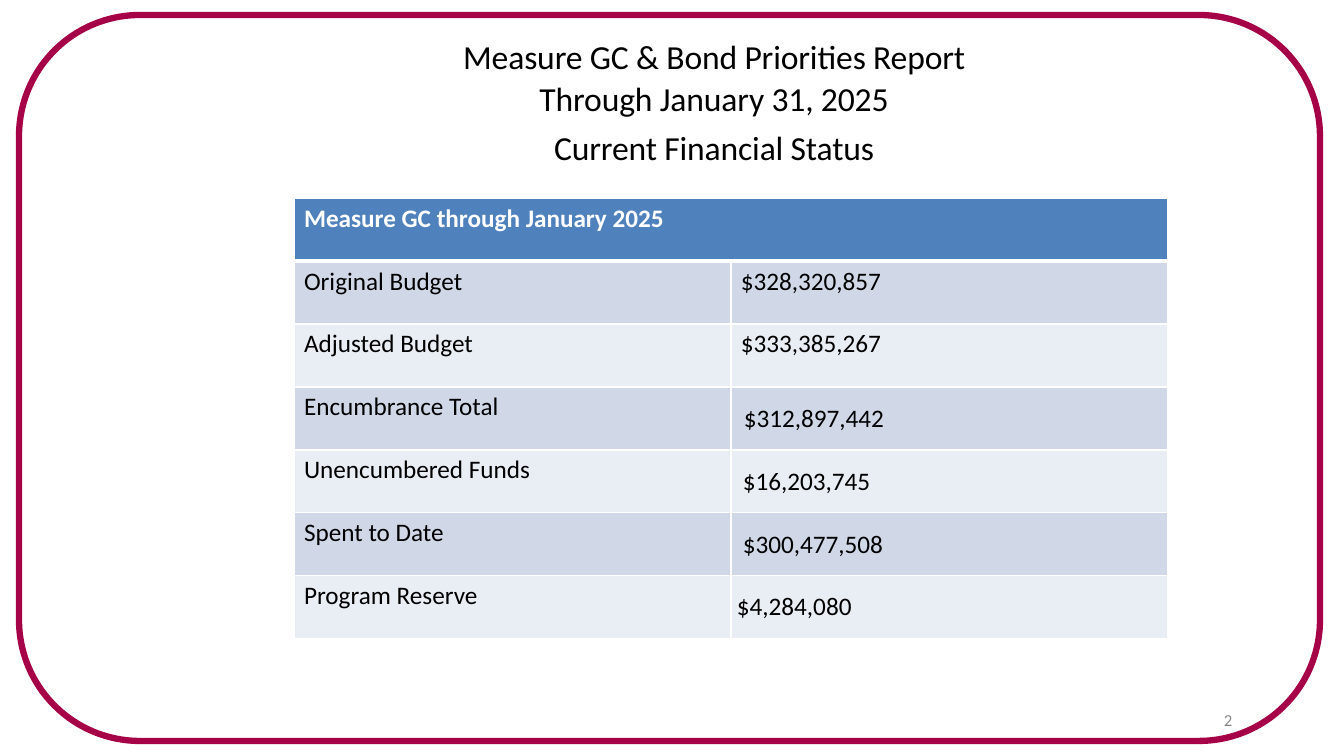
from dataclasses import dataclass

from lxml import etree
from pptx import Presentation
from pptx import util as u
from pptx.dml.color import RGBColor
from pptx.enum import shapes, text
from pptx.oxml import ns

EMU_PER_PX = 914400 / 100.8
FONT = "Calibri"
COLOURS = {
    "frame": "A60247",
    "page_number": "888888",
    "ink": "000000",
    "white": "FFFFFF",
    "header": "4F81BD",
    "odd_row": "D0D8E8",
    "even_row": "E9EDF4",
}


@dataclass
class BudgetRow:
    label: str
    value: str
    indent: int = 10
    centred: bool = True


BUDGET_ROWS = [
    BudgetRow("Original Budget", "$328,320,857", centred=False),
    BudgetRow("Adjusted Budget", "$333,385,267", centred=False),
    BudgetRow("Encumbrance Total", "$312,897,442", indent=13),
    BudgetRow("Unencumbered Funds", "$16,203,745", indent=12),
    BudgetRow("Spent to Date", "$300,477,508", indent=12),
    BudgetRow("Program Reserve", "$4,284,080", indent=6),
]


def px(length: int) -> u.Emu:
    return u.Emu(round(length * EMU_PER_PX))


def colour(name: str) -> RGBColor:
    return RGBColor.from_string(COLOURS[name])


def write(para, content: str, *, size: int, ink: str = "ink", bold: bool = False,
          align=text.PP_ALIGN.LEFT, line: float | None = None,
          before: float = 0, tracking: int = 0) -> None:
    span = para.add_run()
    span.text = content
    span.font.name = FONT
    span.font.size = u.Pt(size)
    span.font.bold = bold
    span.font.color.rgb = colour(ink)
    if tracking:
        span.font._element.set("spc", str(tracking))
    para.alignment = align
    if line:
        para.line_spacing = u.Pt(line)
    if before:
        para.space_before = u.Pt(before)


def add_text_frame(page, left: int, top: int, width: int, height: int):
    box = page.shapes.add_textbox(px(left), px(top), px(width), px(height))
    frame = box.text_frame
    frame.word_wrap = True
    frame.margin_left = frame.margin_top = frame.margin_right = frame.margin_bottom = 0
    return frame


def add_borders(cell, *, top: int = 1, bottom: int = 1) -> None:
    properties = cell._tc.get_or_add_tcPr()
    widths = {"a:lnL": 1, "a:lnR": 1, "a:lnT": top, "a:lnB": bottom}
    for position, (tag, width) in enumerate(widths.items()):
        border = etree.Element(ns.qn(tag), w=str(u.Pt(width)))
        fill = etree.SubElement(border, ns.qn("a:solidFill"))
        etree.SubElement(fill, ns.qn("a:srgbClr"), val=COLOURS["white"])
        properties.insert(position, border)


def fill_cell(cell, content: str, fill: str, *, ink: str = "ink", bold: bool = False,
              top: int = 1, bottom: int = 1) -> None:
    cell.fill.solid()
    cell.fill.fore_color.rgb = colour(fill)
    add_borders(cell, top=top, bottom=bottom)
    if content:
        write(cell.text_frame.paragraphs[0], content, size=18, ink=ink, bold=bold)


def add_frame(page) -> None:
    frame = page.shapes.add_shape(shapes.MSO_SHAPE.ROUNDED_RECTANGLE,
                                  px(19), px(15), px(1301), px(726))
    frame.shadow.inherit = False
    frame.fill.background()
    frame.line.color.rgb = colour("frame")
    frame.line.width = u.Pt(4.5)


def add_title(page) -> None:
    frame = add_text_frame(page, 436, 33, 556, 134)
    frame.margin_top = px(1)
    centre = text.PP_ALIGN.CENTER
    write(frame.paragraphs[0], "Measure GC & Bond Priorities Report Through January 31, 2025",
          size=24, align=centre, line=30.2, tracking=-10)
    write(frame.add_paragraph(), "Current Financial Status",
          size=24, align=centre, line=30.2, before=4.8, tracking=-10)


def add_budget_table(page) -> None:
    row_count = len(BUDGET_ROWS) + 1
    table = page.shapes.add_table(row_count, 2, px(294), px(198),
                                  px(874), px(63 * row_count)).table
    table.first_row = table.horz_banding = False
    for column in table.columns:
        column.width = px(437)
    for table_row in table.rows:
        table_row.height = px(63)

    # Header across both columns
    table.cell(0, 0).merge(table.cell(0, 1))
    for column, heading in enumerate(("Measure GC through January 2025", "")):
        fill_cell(table.cell(0, column), heading, "header", ink="white", bold=True, bottom=3)

    # Budget lines
    for index, row in enumerate(BUDGET_ROWS, start=1):
        fill = "odd_row" if index % 2 else "even_row"
        top = 3 if index == 1 else 1
        fill_cell(table.cell(index, 0), row.label, fill, top=top)
        amount = table.cell(index, 1)
        fill_cell(amount, row.value, fill, top=top)
        amount.margin_left = px(row.indent)
        if row.centred:
            amount.margin_top = amount.margin_right = amount.margin_bottom = 0
            amount.vertical_anchor = text.MSO_ANCHOR.MIDDLE


def main() -> None:
    deck = Presentation()
    deck.slide_width, deck.slide_height = px(1344), px(756)
    page = deck.slides.add_slide(deck.slide_layouts[6])

    add_frame(page)

    # Page number
    number = add_text_frame(page, 1220, 713, 27, 19)
    number.margin_left = px(4)
    write(number.paragraphs[0], "2", size=12, ink="page_number", line=12.4)

    add_title(page)
    add_budget_table(page)
    deck.save("out.pptx")


if __name__ == "__main__":
    main()
